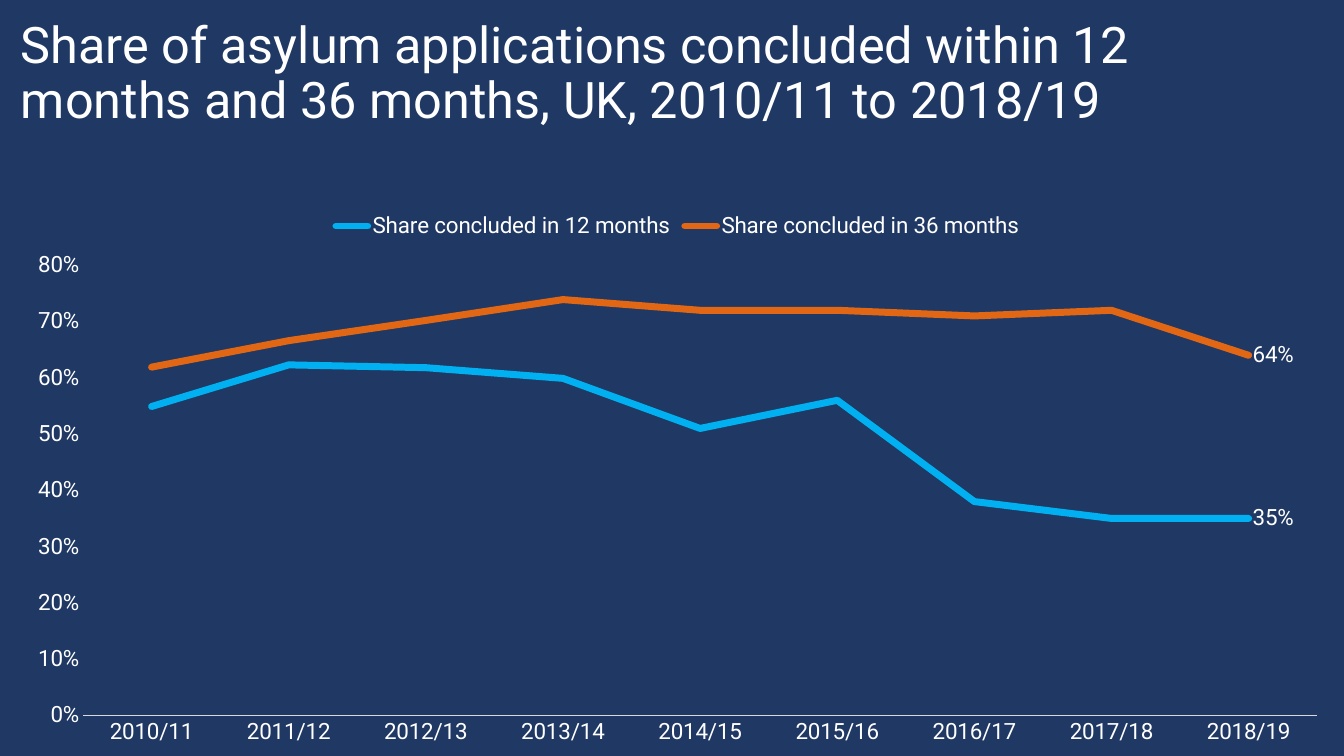
from dataclasses import dataclass

from lxml.etree import SubElement
from pptx import Presentation
from pptx.chart.data import CategoryChartData
from pptx.dml.color import RGBColor
from pptx.enum.chart import XL_CHART_TYPE, XL_LABEL_POSITION, XL_LEGEND_POSITION, XL_MARKER_STYLE, XL_TICK_MARK
from pptx.enum.text import MSO_ANCHOR
from pptx.oxml.ns import qn
from pptx.util import Inches, Pt


@dataclass(frozen=True)
class Theme:
    font: str = "Roboto"
    background: str = "203864"
    text: str = "FFFFFF"
    axis: str = "D9D9D9"
    within_12: str = "00B0F0"
    within_36: str = "E26714"
    title_size: int = 36
    chart_size: int = 16
    series_width: int = 5
    axis_width: float = 0.75


class SlideBuilder:
    def __init__(self, slide, theme):
        self.slide = slide
        self.theme = theme
        fill = slide.background.fill
        fill.solid()
        fill.fore_color.rgb = RGBColor.from_string(theme.background)

    def style_font(self, font, size):
        font.name = self.theme.font
        font.size = Pt(size)
        font.color.rgb = RGBColor.from_string(self.theme.text)

    def style_line(self, line, color, width):
        line.color.rgb = RGBColor.from_string(color)
        line.width = Pt(width)

    def add_title(self, text, left, top, width, height):
        box = self.slide.shapes.add_textbox(Inches(left), Inches(top), Inches(width), Inches(height))
        frame = box.text_frame
        frame.word_wrap = True
        frame.vertical_anchor = MSO_ANCHOR.MIDDLE
        frame.text = text
        paragraph = frame.paragraphs[0]
        paragraph.line_spacing = 0.9
        self.style_font(paragraph.runs[0].font, self.theme.title_size)

    def add_line_chart(self, categories, series_data, left, top, width, height):
        data = CategoryChartData(number_format="0%")
        data.categories = categories
        for name, values, _ in series_data:
            data.add_series(name, values)
        chart = self.slide.shapes.add_chart(
            XL_CHART_TYPE.LINE, Inches(left), Inches(top), Inches(width), Inches(height), data
        ).chart
        chart.has_title = False
        self.style_font(chart.font, self.theme.chart_size)
        chart.has_legend = True
        chart.legend.position = XL_LEGEND_POSITION.TOP
        chart.legend.include_in_layout = False
        self.style_font(chart.legend.font, self.theme.chart_size)
        self.style_axes(chart)
        chart.plots[0].vary_by_categories = False
        for series, (_, values, color) in zip(chart.plots[0].series, series_data):
            self.style_series(series, color, len(values) - 1)
        self.place_plot(chart, x=0.054, y=0.115, w=0.926, h=0.812)

    def style_axes(self, chart):
        for axis in (chart.category_axis, chart.value_axis):
            axis.major_tick_mark = XL_TICK_MARK.NONE
            axis.minor_tick_mark = XL_TICK_MARK.NONE
            axis.has_major_gridlines = False
            self.style_font(axis.tick_labels.font, self.theme.chart_size)
        self.style_line(chart.category_axis.format.line, self.theme.axis, self.theme.axis_width)
        value_axis = chart.value_axis
        value_axis.format.line.fill.background()
        value_axis.minimum_scale = 0
        value_axis.maximum_scale = 0.8
        value_axis.major_unit = 0.1
        value_axis.tick_labels.number_format = "0%"
        value_axis.tick_labels.number_format_is_linked = False

    def style_series(self, series, color, labelled_point):
        series.smooth = False
        series.marker.style = XL_MARKER_STYLE.NONE
        line = series.format.line
        self.style_line(line, color, self.theme.series_width)
        series._element.find(".//" + qn("a:ln")).set("cap", "rnd")
        label = series.points[labelled_point].data_label
        self.style_font(label.font, self.theme.chart_size)
        label.position = XL_LABEL_POSITION.RIGHT

    def place_plot(self, chart, **fractions):
        plot_area = chart._chartSpace.find(".//" + qn("c:plotArea"))
        layout = plot_area.find(qn("c:layout"))
        if layout is None:
            layout = SubElement(plot_area, qn("c:layout"))
            plot_area.insert(0, layout)
        manual = SubElement(layout, qn("c:manualLayout"))
        settings = {"layoutTarget": "inner", "xMode": "edge", "yMode": "edge", **fractions}
        for tag, value in settings.items():
            SubElement(manual, qn(f"c:{tag}")).set("val", str(value))


def main():
    presentation = Presentation()
    presentation.slide_width = Inches(13.33)
    presentation.slide_height = Inches(7.5)
    theme = Theme()
    builder = SlideBuilder(presentation.slides.add_slide(presentation.slide_layouts[6]), theme)
    builder.add_title(
        "Share of asylum applications concluded within 12 months and 36 months, UK, 2010/11 to 2018/19",
        0.11, 0.27, 12.49, 0.94,
    )
    years = [f"{year}/{year % 100 + 1}" for year in range(2010, 2019)]
    shares = [
        ("Share concluded in 12 months",
         (0.549, 0.623, 0.618, 0.599, 0.51, 0.56, 0.38, 0.35, 0.35), theme.within_12),
        ("Share concluded in 36 months",
         (0.619, 0.666, 0.702, 0.739, 0.72, 0.72, 0.71, 0.72, 0.64), theme.within_36),
    ]
    builder.add_line_chart(years, shares, 0.11, 2, 13.22, 5.5)
    presentation.save("out.pptx")


if __name__ == "__main__":
    main()
